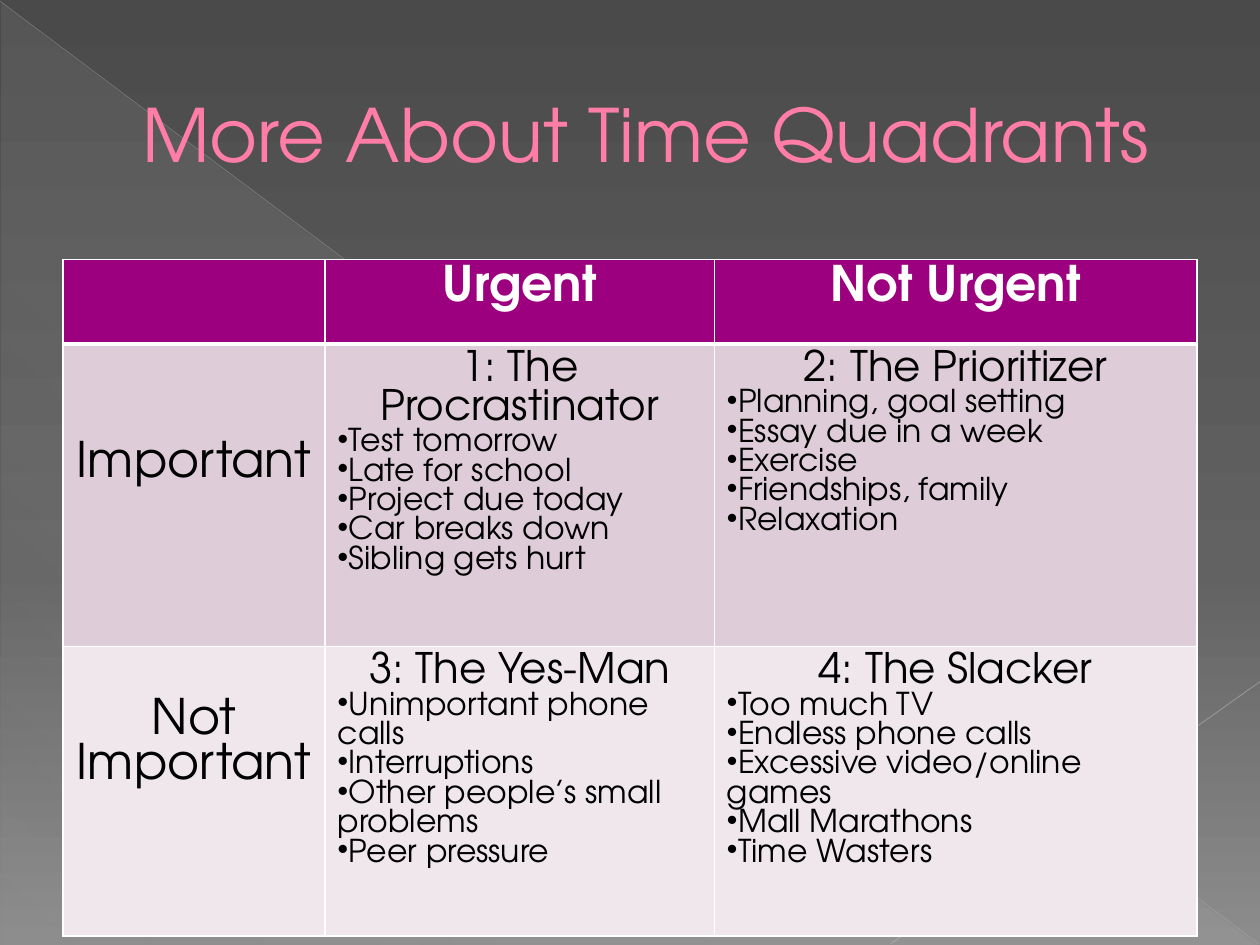
from dataclasses import dataclass

from lxml.etree import SubElement
from pptx import Presentation
from pptx.dml.color import RGBColor
from pptx.enum.shapes import MSO_CONNECTOR, MSO_SHAPE
from pptx.enum.text import MSO_ANCHOR, PP_ALIGN
from pptx.oxml import parse_xml
from pptx.oxml.ns import nsdecls, qn
from pptx.util import Inches, Pt


@dataclass(frozen=True)
class Theme:
    """Colours, type sizes and font of the slide."""
    font: str = "TeX Gyre Adventor"
    title: str = "FF7DA7"
    header: str = "9C007F"
    bands: tuple = ("DECCD8", "EFE7EC")
    white: str = "FFFFFF"
    black: str = "000000"
    backdrop: tuple = ((0, "4A4A4A", 100), (60, "626262", 100), (100, "8C8C8C", 100))
    sheen: tuple = ((0, "D2D2D2", 10), (70, "D2D2D2", 8), (100, "D2D2D2", 1))
    title_size: int = 42
    label_size: int = 28
    heading_size: int = 24
    item_size: int = 18


THEME = Theme()
HEADERS = ("", "Urgent", "Not Urgent")
ROWS = (
    ("Important", 0.77, (
        ("1: The Procrastinator", ("Test tomorrow", "Late for school", "Project due today",
                                   "Car breaks down", "Sibling gets hurt")),
        ("2: The Prioritizer", ("Planning, goal setting", "Essay due in a week", "Exercise",
                                "Friendships, family", "Relaxation")),
    )),
    ("Not Important", 0.41, (
        ("3: The Yes-Man", ("Unimportant phone calls", "Interruptions",
                            "Other people’s small problems", "Peer pressure")),
        ("4: The Slacker", ("Too much TV", "Endless phone calls", "Excessive video/online games",
                            "Mall Marathons", "Time Wasters")),
    )),
)


def set_gradient(fill, element, stops, angle):
    """Give a fill gradient stops of position, colour and opacity."""
    fill.gradient()
    grad = element.find(".//" + qn("a:gradFill"))
    stop_list = grad.find(qn("a:gsLst"))
    for old in list(stop_list):
        stop_list.remove(old)
    for pos, color, opacity in stops:
        gs = SubElement(stop_list, qn("a:gs"), pos=str(pos * 1000))
        clr = SubElement(gs, qn("a:srgbClr"), val=color)
        if opacity < 100:
            SubElement(clr, qn("a:alpha"), val=str(opacity * 1000))
    grad.find(qn("a:lin")).set("ang", str(angle * 60000))


def add_sheen(s):
    """Add the translucent triangle behind the content."""
    sp = s.shapes.add_shape(MSO_SHAPE.RIGHT_TRIANGLE, Inches(0.01), Inches(0.02),
                            Inches(9.98), Inches(7.48))
    sp.shadow.inherit = False
    sp.line.fill.background()
    set_gradient(sp.fill, sp.element, THEME.sheen, 133)


def add_line(s, start, end, color, width, opacity):
    """Add a translucent straight line."""
    line = s.shapes.add_connector(MSO_CONNECTOR.STRAIGHT, *map(Inches, start + end))
    line.line.color.rgb = RGBColor.from_string(color)
    line.line.width = Pt(width)
    clr = line.element.find(".//" + qn("a:ln")).find(".//" + qn("a:srgbClr"))
    SubElement(clr, qn("a:alpha"), val=str(opacity * 1000))
    SubElement(line.element.spPr, qn("a:effectLst"))


def add_run(p, text, size, color, bold=False):
    """Add one styled run to a paragraph."""
    r = p.add_run()
    r.text = text
    r.font.name = THEME.font
    r.font.size = Pt(size)
    r.font.bold = bold
    r.font.color.rgb = RGBColor.from_string(color)


def add_title(s, text):
    """Add the slide title."""
    tf = s.shapes.add_textbox(Inches(0.5), Inches(0.29), Inches(9), Inches(1.53)).text_frame
    tf.word_wrap = True
    tf.vertical_anchor = MSO_ANCHOR.MIDDLE
    p = tf.paragraphs[0]
    p._p.get_or_add_pPr().set("marL", str(Inches(0.53)))
    add_run(p, text, THEME.title_size, THEME.title)


def style_cell(cell, color, top=1, bottom=1):
    """Fill a cell and give it white borders."""
    cell.fill.solid()
    cell.fill.fore_color.rgb = RGBColor.from_string(color)
    tc_pr = cell._tc.get_or_add_tcPr()
    for i, (side, width) in enumerate(zip("LRTB", (1, 1, top, bottom))):
        tc_pr.insert(i, parse_xml(
            f'<a:ln{side} {nsdecls("a")} w="{Pt(width)}"><a:solidFill>'
            f'<a:srgbClr val="{THEME.white}"/></a:solidFill></a:ln{side}>'))


def write_centered(cell, text, size, color, bold=False):
    """Write the centred first paragraph of a cell."""
    p = cell.text_frame.paragraphs[0]
    p.alignment = PP_ALIGN.CENTER
    add_run(p, text, size, color, bold)


def add_bullet(cell, text):
    """Append one bulleted item to a cell."""
    p = cell.text_frame.add_paragraph()
    p_pr = p._p.get_or_add_pPr()
    p_pr.set("marL", "0")
    p_pr.set("indent", "0")
    SubElement(p_pr, qn("a:buChar"), char="•")
    add_run(p, text, THEME.item_size, THEME.black)


def add_quadrants(s):
    """Add the table of time quadrants."""
    table = s.shapes.add_table(3, 3, Inches(0.5), Inches(2.06), Inches(9), Inches(5.17)).table
    for col, width in zip(table.columns, (2.08, 3.09, 3.83)):
        col.width = Inches(width)
    for row, height in zip(table.rows, (0.67, 2.25, 2.25)):
        row.height = Inches(height)
    for c, text in enumerate(HEADERS):
        cell = table.cell(0, c)
        style_cell(cell, THEME.header, bottom=3)
        if text:
            write_centered(cell, text, THEME.label_size, THEME.white, bold=True)
    for i, (label, margin, quadrants) in enumerate(ROWS):
        cells = [table.cell(i + 1, c) for c in range(3)]
        for cell in cells:
            style_cell(cell, THEME.bands[i], top=1 if i else 3)
        cells[0].margin_top = Inches(margin)
        write_centered(cells[0], label, THEME.label_size, THEME.black)
        for cell, (heading, items) in zip(cells[1:], quadrants):
            write_centered(cell, heading, THEME.heading_size, THEME.black)
            for item in items:
                add_bullet(cell, item)


def main():
    """Build and save the slide."""
    prs = Presentation()
    prs.slide_width, prs.slide_height = Inches(10), Inches(7.5)
    s = prs.slides.add_slide(prs.slide_layouts[6])
    set_gradient(s.background.fill, s.element, THEME.backdrop, 90)
    add_sheen(s)
    add_line(s, (0, 0.01), (9.99, 7.49), "BFBFBF", 0.39, 35)
    add_line(s, (10, 5.41), (7.07, 7.49), "C6C6C6", 0.47, 45)
    add_title(s, "More About Time Quadrants")
    add_quadrants(s)
    prs.save("out.pptx")


if __name__ == "__main__":
    main()
